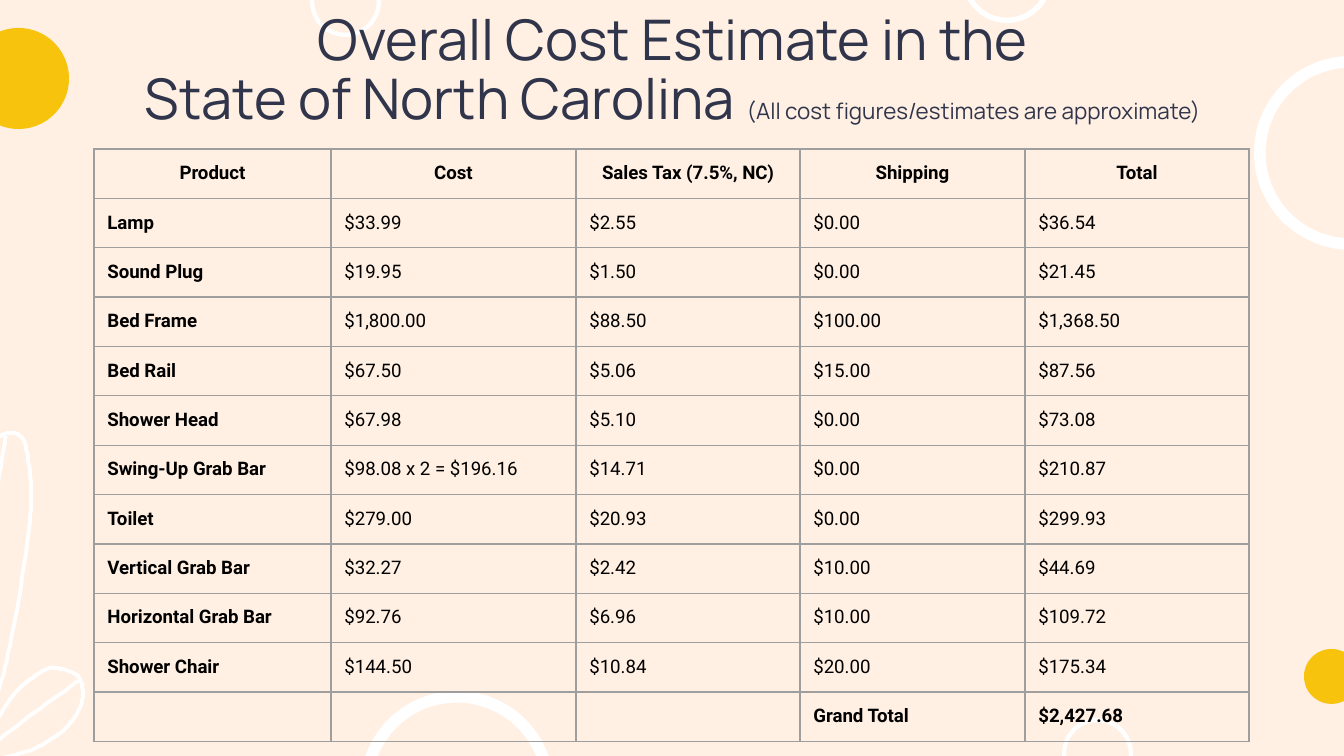
from dataclasses import dataclass

from lxml.etree import SubElement
from pptx import Presentation
from pptx.dml.color import RGBColor
from pptx.enum.shapes import MSO_SHAPE
from pptx.enum.text import MSO_ANCHOR, PP_ALIGN
from pptx.oxml.ns import qn
from pptx.util import Inches, Pt


@dataclass(frozen=True)
class Theme:
    background: str = "FFF0E3"
    accent: str = "F7C30D"
    white: str = "FFFFFF"
    heading: str = "30354B"
    body: str = "000000"
    border: str = "9E9E9E"
    heading_font: str = "Manrope"
    body_font: str = "Roboto"
    title_size: int = 30
    note_size: int = 12
    table_size: int = 10
    border_width: float = 0.75
    leaf_width: float = 2


SCALE = Inches(10) / 1344
BASE = (-30, 762)
DOTS = [(-32, 28, 101), (1304, 649, 55)]
RINGS = [(962, -67, 90), (310, -34, 71), (1254, 56, 194), (1062, 718, 71), (360, 691, 194)]
LEAVES = [
    [BASE, (-30, 640), (-29, 554), (-24, 485), (-14, 452), (-1, 437), (11, 433), (21, 437),
     (27, 452), (31, 493), (27, 545), (13, 630), (-1, 689), BASE],
    [(6, 436), (-2, 486), (-15, 628), (-26, 735), BASE],
    [BASE, (-32, 672), (-42, 599), (-53, 534), (-70, 475), (-85, 440), (-95, 437), (-108, 444),
     (-117, 477), (-111, 520), (-97, 564), (-75, 632), (-54, 699), BASE],
    [(-103, 440), (-96, 495), (-71, 595), (-47, 698), BASE],
    [BASE, (-18, 742), (3, 710), (20, 688), (45, 670), (56, 668), (75, 674), (82, 686),
     (81, 705), (65, 729), (36, 748), (7, 757), BASE],
    [(78, 681), (34, 713), (-12, 748), BASE],
    [BASE, (-75, 707), (-108, 679), (-129, 671), (-149, 676), (-157, 689), (-152, 707),
     (-127, 725), (-97, 736), (-70, 748), BASE],
    [(-146, 677), (-117, 690), (-71, 724), BASE],
]
COLUMNS = [237, 245, 224, 225, 224]
ROW_HEIGHT = 48
COSTS = [
    ["Product", "Cost", "Sales Tax (7.5%, NC)", "Shipping", "Total"],
    ["Lamp", "$33.99", "$2.55", "$0.00", "$36.54"],
    ["Sound Plug", "$19.95", "$1.50", "$0.00", "$21.45"],
    ["Bed Frame", "$1,800.00", "$88.50", "$100.00", "$1,368.50"],
    ["Bed Rail", "$67.50", "$5.06", "$15.00", "$87.56"],
    ["Shower Head", "$67.98", "$5.10", "$0.00", "$73.08"],
    ["Swing-Up Grab Bar", "$98.08 x 2 = $196.16", "$14.71", "$0.00", "$210.87"],
    ["Toilet", "$279.00", "$20.93", "$0.00", "$299.93"],
    ["Vertical Grab Bar", "$32.27", "$2.42", "$10.00", "$44.69"],
    ["Horizontal Grab Bar", "$92.76", "$6.96", "$10.00", "$109.72"],
    ["Shower Chair", "$144.50", "$10.84", "$20.00", "$175.34"],
    ["", "", "", "Grand Total", "$2,427.68"],
]


def emu(*lengths):
    return [round(length * SCALE) for length in lengths]


def smooth_curve(points, steps=8):
    padded = [points[0], *points, points[-1]]
    curve = [points[0]]
    for before, start, end, after in zip(padded, padded[1:], padded[2:], padded[3:]):
        for step in range(1, steps + 1):
            t = step / steps
            curve.append(tuple(
                b + t / 2 * (c - a + t * (2 * a - 5 * b + 4 * c - d + t * (3 * b - a - 3 * c + d)))
                for a, b, c, d in zip(before, start, end, after)))
    return curve


class SlideBuilder:
    """Draws themed elements on the current slide."""

    def __init__(self, slide, theme):
        self.slide = slide
        self.theme = theme
        fill = slide.background.fill
        fill.solid()
        fill.fore_color.rgb = RGBColor.from_string(theme.background)

    def circle(self, left, top, size, color, ring=0):
        kind = MSO_SHAPE.DONUT if ring else MSO_SHAPE.OVAL
        shape = self.slide.shapes.add_shape(kind, *emu(left, top, size, size))
        if ring:
            shape.adjustments[0] = ring
        shape.shadow.inherit = False
        shape.fill.solid()
        shape.fill.fore_color.rgb = RGBColor.from_string(color)
        shape.line.fill.background()

    def line_art(self, outlines):
        curves = [smooth_curve(points) for points in outlines]
        builder = self.slide.shapes.build_freeform(*curves[0][0], scale=SCALE)
        for index, curve in enumerate(curves):
            if index:
                builder.move_to(*curve[0])
            builder.add_line_segments(curve[1:], close=False)
        shape = builder.convert_to_shape()
        shape.shadow.inherit = False
        shape.fill.background()
        shape.line.color.rgb = RGBColor.from_string(self.theme.white)
        shape.line.width = Pt(self.theme.leaf_width)

    def run(self, para, text, size, font, color, bold=False):
        span = para.add_run()
        span.text = text
        span.font.size = Pt(size)
        span.font.name = font
        span.font.bold = bold
        span.font.color.rgb = RGBColor.from_string(color)

    def title(self, left, top, width, height, lines):
        box = self.slide.shapes.add_textbox(*emu(left, top, width, height))
        frame = box.text_frame
        frame.word_wrap = True
        frame.vertical_anchor = MSO_ANCHOR.TOP
        frame.margin_left = frame.margin_right = frame.margin_top = frame.margin_bottom = Inches(0.1)
        for index, spans in enumerate(lines):
            para = frame.add_paragraph() if index else frame.paragraphs[0]
            para.alignment = PP_ALIGN.CENTER
            para.line_spacing = 0.88
            for text, size in spans:
                self.run(para, text, size, self.theme.heading_font, self.theme.heading)

    def table(self, left, top, rows, widths, row_height):
        frame = self.slide.shapes.add_table(
            len(rows), len(widths), *emu(left, top, sum(widths), row_height * len(rows)))
        table = frame.table
        table.first_row = table.horz_banding = False
        for column, width in zip(table.columns, emu(*widths)):
            column.width = width
        for row_index, row in enumerate(rows):
            for column_index, text in enumerate(row):
                header = row_index == 0
                bold = header or column_index == 0 or row_index == len(rows) - 1
                self.cell(table.cell(row_index, column_index), text, bold, header)

    def cell(self, cell, text, bold, centered):
        theme = self.theme
        cell.margin_left = cell.margin_right = cell.margin_top = cell.margin_bottom = Inches(0.1)
        para = cell.text_frame.paragraphs[0]
        para.alignment = PP_ALIGN.CENTER if centered else PP_ALIGN.LEFT
        if text:
            self.run(para, text, theme.table_size, theme.body_font, theme.body, bold)
        else:
            SubElement(para._p, qn("a:endParaRPr"), sz=str(theme.table_size * 100))
        properties = cell._tc.get_or_add_tcPr()
        for side in ("lnL", "lnR", "lnT", "lnB"):
            line = SubElement(properties, qn(f"a:{side}"), w=str(Pt(theme.border_width)))
            fill = SubElement(line, qn("a:solidFill"))
            SubElement(fill, qn("a:srgbClr"), val=theme.border)
        cell.fill.background()


def main():
    theme = Theme()
    deck = Presentation()
    deck.slide_width, deck.slide_height = emu(1344, 756)
    page = SlideBuilder(deck.slides.add_slide(deck.slide_layouts[6]), theme)
    for dot in DOTS:
        page.circle(*dot, theme.accent)
    page.line_art(LEAVES)
    for ring in RINGS:
        page.circle(*ring, theme.white, ring=0.06)
    page.title(13, 0, 1331, 149, [
        [("Overall Cost Estimate in the ", theme.title_size)],
        [("State of North Carolina ", theme.title_size),
         ("(All cost figures/estimates are approximate)", theme.note_size),
         (" ", theme.title_size)],
    ])
    page.table(94, 149, COSTS, COLUMNS, ROW_HEIGHT)
    deck.save("out.pptx")


if __name__ == "__main__":
    main()
